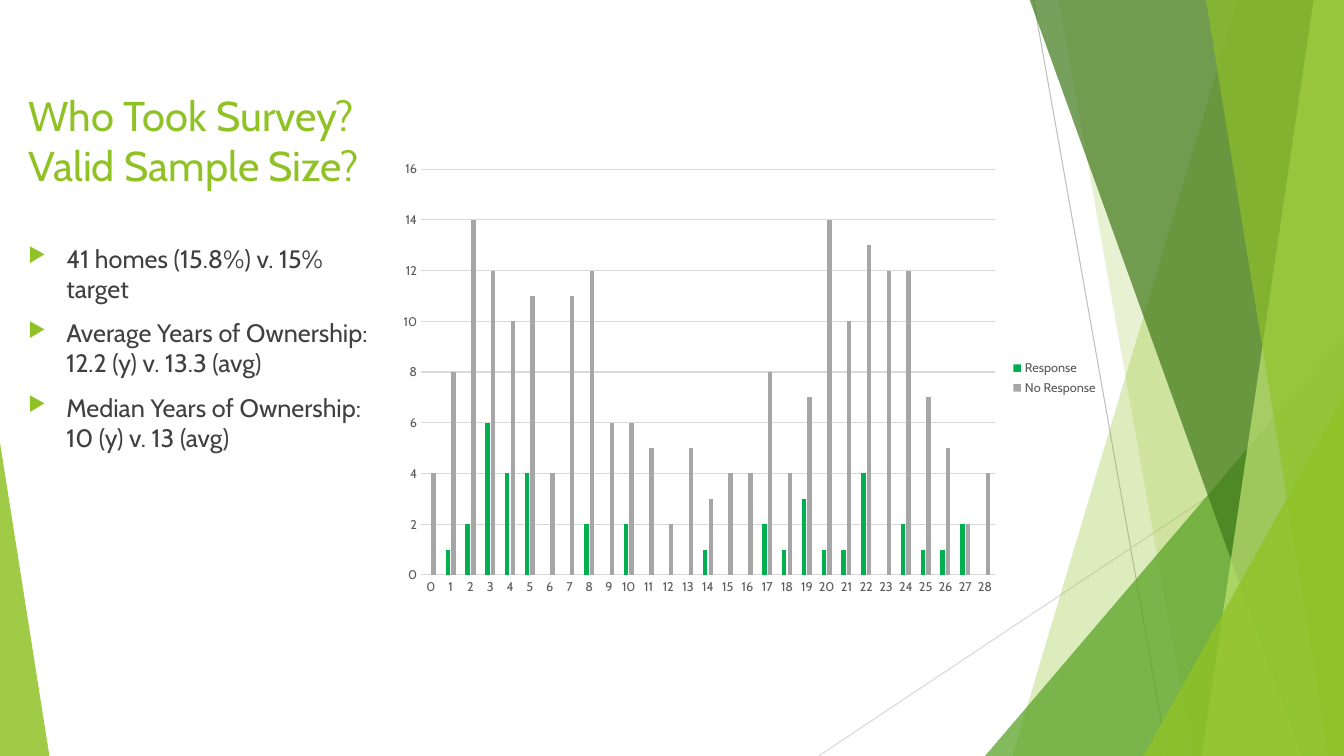
from lxml import etree
from pptx import Presentation
from pptx.chart.data import CategoryChartData
from pptx.dml.color import RGBColor
from pptx.enum.chart import XL_CHART_TYPE as ChartType, XL_LEGEND_POSITION as LegendPosition
from pptx.enum.chart import XL_TICK_MARK as TickMark
from pptx.enum.shapes import MSO_CONNECTOR as Connector, MSO_SHAPE as Shape
from pptx.enum.text import MSO_ANCHOR as Anchor, MSO_AUTO_SIZE as AutoSize, PP_ALIGN as Align
from pptx.oxml.ns import qn
from pptx.util import Pt

PX = 9144  # one hundredth of an inch
WIDTH, HEIGHT = 1333, 750
FONT = "Cabin"
LIME, GREEN, FOREST, PALE = "90C226", "54A021", "3F7819", "C0E474"
GRID, TEXT, LABEL = "D9D9D9", "404040", "595959"

BULLETS = [
    "41 homes (15.8%) v. 15% target",
    "Average Years of Ownership: 12.2 (y) v. 13.3 (avg)",
    "Median Years of Ownership: 10 (y) v. 13 (avg)",
]
SERIES = [
    ("Response", "00B050",
     [None, 1, 2, 6, 4, 4, None, None, 2, None, 2, None, None, None, 1,
      None, None, 2, 1, 3, 1, 1, 4, None, 2, 1, 1, 2, None]),
    ("No Response", "A6A6A6",
     [4, 8, 14, 12, 10, 11, 4, 11, 12, 6, 6, 5, 2, 5, 3,
      4, 4, 8, 4, 7, 14, 10, 13, 12, 12, 7, 5, 2, 4]),
]


def color(value):
    return RGBColor.from_string(value)


def scaled(*lengths):
    return [length * PX for length in lengths]


def set_font(font, size, fill):
    font.name, font.size = FONT, Pt(size)
    font.color.rgb = color(fill)


def write(paragraph, text, *, size, fill, before=0, bullet=None):
    run = paragraph.add_run()
    run.text = text
    set_font(run.font, size, fill)
    paragraph.alignment = Align.LEFT
    paragraph.space_before = Pt(before)
    if bullet:
        properties = paragraph._p.get_or_add_pPr()
        properties.set("marL", str(38 * PX))
        properties.set("indent", str(-38 * PX))
        bullet_color = etree.SubElement(properties, qn("a:buClr"))
        etree.SubElement(bullet_color, qn("a:srgbClr"), val=bullet)
        etree.SubElement(properties, qn("a:buSzPct"), val="80000")
        etree.SubElement(properties, qn("a:buChar"), char="▶")


# Backdrop pieces
def paint(shape, fill, opacity):
    shape.shadow.inherit = False
    shape.fill.solid()
    shape.fill.fore_color.rgb = color(fill)
    shape.line.fill.background()
    tone = shape.fill._xPr.find(qn("a:solidFill"))[0]
    etree.SubElement(tone, qn("a:alpha"), val=str(opacity * 1000))


def add_line(slide, start, end, stroke):
    line = slide.shapes.add_connector(Connector.STRAIGHT, *scaled(*start, *end))
    line.line.color.rgb = color(stroke)
    line.line.width = Pt(0.75)
    etree.SubElement(line._element.spPr, qn("a:effectLst"))


def add_band(slide, top_left, bottom_left, fill, opacity):
    """Band from a slanted left edge to the right edge of the slide."""
    builder = slide.shapes.build_freeform(top_left, -1, scale=PX)
    builder.add_line_segments([(WIDTH, -1), (WIDTH, HEIGHT), (bottom_left, HEIGHT)])
    paint(builder.convert_to_shape(), fill, opacity)


def add_corner(slide, left, top, width, apex, fill, opacity):
    """Triangle standing on the bottom edge of the slide."""
    corner = slide.shapes.add_shape(
        Shape.ISOSCELES_TRIANGLE, *scaled(left, top, width, HEIGHT - top))
    corner.adjustments[0] = apex
    paint(corner, fill, opacity)


def add_backdrop(slide):
    add_line(slide, (1025, 0), (1158, HEIGHT), "BFBFBF")
    add_line(slide, (WIDTH, 403), (812, HEIGHT), GRID)
    add_band(slide, 1228, 1004, LIME, 30)
    add_band(slide, 1050, 1183, LIME, 20)
    add_corner(slide, 977, 333, 356, 1, GREEN, 72)
    add_band(slide, 1021, 1291, FOREST, 70)
    add_band(slide, 1303, 1192, PALE, 70)
    add_band(slide, 1196, 1318, LIME, 65)
    add_corner(slide, 1134, 393, 199, 1, LIME, 80)
    add_corner(slide, 0, 439, 49, 0, LIME, 85)


# Text
def add_title(slide, box, text):
    title = slide.shapes.title
    title.left, title.top, title.width, title.height = scaled(*box)
    frame = title.text_frame
    frame.word_wrap, frame.auto_size = True, AutoSize.NONE
    frame.vertical_anchor = Anchor.MIDDLE
    write(frame.paragraphs[0], text, size=29.7, fill=LIME)


def add_bullets(slide, box, lines):
    frame = slide.shapes.add_textbox(*scaled(*box)).text_frame
    frame.word_wrap = True
    for index, line in enumerate(lines):
        paragraph = frame.add_paragraph() if index else frame.paragraphs[0]
        write(paragraph, line, size=18, fill=TEXT, before=10, bullet=LIME)


# Chart of homes by years of ownership
def style_axis(axis):
    axis.major_tick_mark = axis.minor_tick_mark = TickMark.NONE
    set_font(axis.tick_labels.font, 9, LABEL)


def add_survey_chart(slide, box):
    data = CategoryChartData()
    data.categories = [str(year) for year in range(29)]
    for name, _, values in SERIES:
        data.add_series(name, values)
    chart = slide.shapes.add_chart(
        ChartType.COLUMN_CLUSTERED, *scaled(*box), data).chart
    set_font(chart.font, 10, "000000")
    chart.has_title = False

    plot = chart.plots[0]
    plot.gap_width, plot.overlap = 219, -27
    plot.vary_by_categories = False
    for series, (_, fill, _) in zip(plot.series, SERIES):
        series.format.fill.solid()
        series.format.fill.fore_color.rgb = color(fill)

    years, homes = chart.category_axis, chart.value_axis
    style_axis(years)
    style_axis(homes)
    homes.minimum_scale, homes.maximum_scale, homes.major_unit = 0, 16, 2
    homes.format.line.fill.background()
    for line in (years.format.line, homes.major_gridlines.format.line):
        line.color.rgb = color(GRID)
        line.width = Pt(0.75)

    chart.has_legend = True
    chart.legend.position = LegendPosition.RIGHT
    chart.legend.include_in_layout = False
    set_font(chart.legend.font, 9, LABEL)


def main():
    presentation = Presentation()
    presentation.slide_width, presentation.slide_height = scaled(WIDTH, HEIGHT)
    slide = presentation.slides.add_slide(presentation.slide_layouts[5])
    add_backdrop(slide)
    add_title(slide, (18, 67, 363, 144), "Who Took Survey? Valid Sample Size?")
    add_bullets(slide, (18, 236, 373, 389), BULLETS)
    add_survey_chart(slide, (386, 151, 713, 448))
    presentation.save("out.pptx")


if __name__ == "__main__":
    main()
